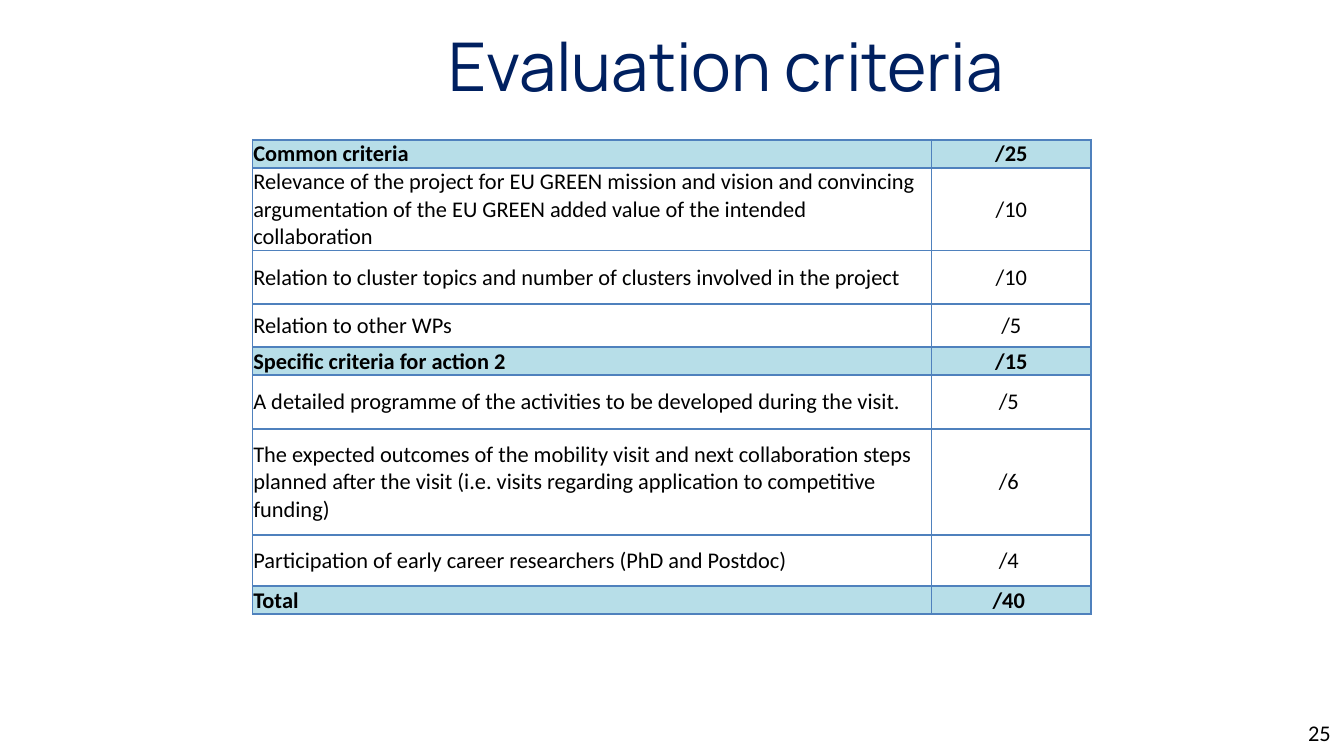
from dataclasses import dataclass

from lxml import etree
from pptx import Presentation
from pptx.dml.color import RGBColor
from pptx.enum.text import MSO_ANCHOR, MSO_AUTO_SIZE, PP_ALIGN
from pptx.oxml.ns import qn
from pptx.util import Inches, Pt

LEFT, CENTER, RIGHT = PP_ALIGN.LEFT, PP_ALIGN.CENTER, PP_ALIGN.RIGHT
MIDDLE = MSO_ANCHOR.MIDDLE
BOTTOM = MSO_ANCHOR.BOTTOM
NO_AUTOFIT = MSO_AUTO_SIZE.NONE

BLACK = "000000"
NAVY = "002060"
BORDER = "4F81BD"
BAND = "B7DEE8"


@dataclass
class Criterion:
    label: str
    score: str
    height: float
    heading: bool = False
    anchor: MSO_ANCHOR = MIDDLE


CRITERIA = [
    Criterion("Common criteria", "/25", 0.2, True, BOTTOM),
    Criterion("Relevance of the project for EU GREEN mission and vision and convincing "
              "argumentation of the EU GREEN added value of the intended collaboration",
              "/10", 0.61, anchor=BOTTOM),
    Criterion("Relation to cluster topics and number of clusters involved in the project",
              "/10", 0.4),
    Criterion("Relation to other WPs", "/5", 0.32),
    Criterion("Specific criteria for action 2", "/15", 0.2, True),
    Criterion("A detailed programme of the activities to be developed during the visit.",
              "/5 ", 0.4),
    Criterion("The expected outcomes of the mobility visit and next collaboration steps "
              "planned after the visit (i.e. visits regarding application to competitive funding)",
              "/6 ", 0.79),
    Criterion("Participation of early career researchers (PhD and Postdoc) ", "/4 ", 0.38),
    Criterion("Total", "/40 ", 0.2, True),
]
COLUMN_WIDTHS = (5.05, 1.19)
CELL_MARGIN = Inches(0.01) // 2


def rgb(value: str) -> RGBColor:
    return RGBColor.from_string(value)


def write(tf, text: str, *, size: float = 12, font: str = "Calibri",
          color: str = BLACK, bold: bool = False, align: PP_ALIGN = LEFT) -> None:
    p = tf.paragraphs[0]
    p.alignment = align
    r = p.add_run()
    r.text = text
    r.font.size = Pt(size)
    r.font.name = font
    r.font.bold = bold
    r.font.color.rgb = rgb(color)


def add_borders(cell, color: str, width: float) -> None:
    tcPr = cell._tc.get_or_add_tcPr()
    for side in ("a:lnL", "a:lnR", "a:lnT", "a:lnB"):
        ln = etree.SubElement(tcPr, qn(side), w=str(Pt(width)))
        fill = etree.SubElement(ln, qn("a:solidFill"))
        etree.SubElement(fill, qn("a:srgbClr"), val=color)


def fill_cell(cell, text: str, heading: bool, align: PP_ALIGN, anchor: MSO_ANCHOR) -> None:
    cell.margin_left = cell.margin_right = cell.margin_top = CELL_MARGIN
    cell.margin_bottom = 0
    cell.vertical_anchor = anchor
    add_borders(cell, BORDER, 1)
    if heading:
        cell.fill.solid()
        cell.fill.fore_color.rgb = rgb(BAND)
    else:
        cell.fill.background()
    write(cell.text_frame, text, bold=heading, align=align)


def add_criteria_table(slide, criteria: list[Criterion]) -> None:
    height = sum(c.height for c in criteria)
    table = slide.shapes.add_table(
        len(criteria), len(COLUMN_WIDTHS), Inches(1.88), Inches(1.04),
        Inches(sum(COLUMN_WIDTHS)), Inches(height)).table
    table.first_row = table.horz_banding = False
    for column, width in zip(table.columns, COLUMN_WIDTHS):
        column.width = Inches(width)
    for i, c in enumerate(criteria):
        table.rows[i].height = Inches(c.height)
        fill_cell(table.cell(i, 0), c.label, c.heading, LEFT, c.anchor)
        fill_cell(table.cell(i, 1), c.score, c.heading, CENTER, MIDDLE)


def add_title(slide, text: str) -> None:
    sp = slide.shapes.title
    sp.left, sp.top = Inches(2.57), Inches(0.15)
    sp.width, sp.height = Inches(5.77), Inches(0.66)
    tf = sp.text_frame
    tf.auto_size = NO_AUTOFIT
    tf.vertical_anchor = MIDDLE
    write(tf, text, size=36, font="Manrope", color=NAVY, align=CENTER)


def add_page_number(slide, number: int) -> None:
    sp = slide.shapes.add_textbox(Inches(7.67), Inches(5.3), Inches(2.33), Inches(0.3))
    tf = sp.text_frame
    tf.word_wrap = True
    tf.vertical_anchor = MIDDLE
    write(tf, str(number), align=RIGHT)


def main() -> None:
    prs = Presentation()
    prs.slide_width = Inches(10)
    prs.slide_height = prs.slide_width * 9 // 16
    slide = prs.slides.add_slide(prs.slide_layouts[5])
    add_criteria_table(slide, CRITERIA)
    add_title(slide, "Evaluation criteria ")
    add_page_number(slide, 25)
    prs.save("out.pptx")


if __name__ == "__main__":
    main()
